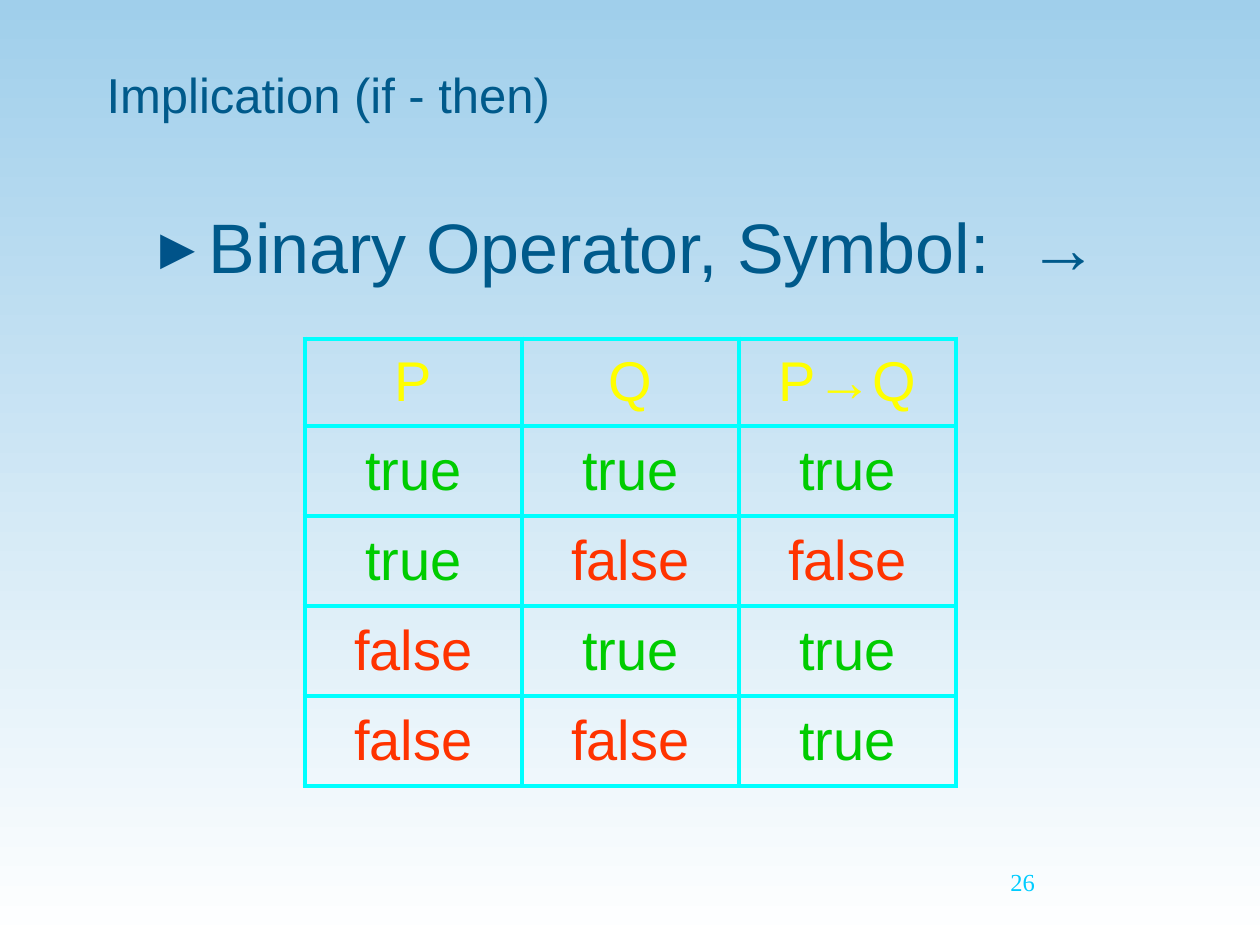
"""Builds a slide with the truth table of logical implication."""
from lxml.etree import SubElement
from pptx import Presentation
from pptx.dml.color import RGBColor
from pptx.enum.text import MSO_ANCHOR as Anchor, MSO_AUTO_SIZE as Fit, PP_ALIGN as Align
from pptx.oxml.ns import qn
from pptx.util import Emu, Pt

BLUE, CYAN = "005A8B", "00FFFF"
INKS = {"true": "00CC00", "false": "FF3300"}
ROWS = [
    ("P", "Q", "P→Q"),
    ("true", "true", "true"),
    ("true", "false", "false"),
    ("false", "true", "true"),
    ("false", "false", "true"),
]


def px(n):
    """Turn pixels into EMU."""
    return Emu(round(n * 914400 / 126))


def tint(color, code):
    """Set a colour from a hex string."""
    color.rgb = RGBColor.from_string(code)


def place(shape, x, y, w, h):
    """Move and size a shape."""
    shape.left, shape.top, shape.width, shape.height = map(px, (x, y, w, h))


def put(frame, text, size, ink, font="Arial", align=Align.LEFT, anchor=Anchor.TOP, inset=6):
    """Write one paragraph, with its arrows in bold."""
    frame.word_wrap = True
    frame.vertical_anchor = anchor
    frame.margin_top = px(inset)
    para = frame.paragraphs[0]
    para.alignment = align
    para.space_before = Pt(0)
    for part in filter(None, text.partition("→")):
        run = para.add_run()
        run.text = part
        run.font.name, run.font.size = font, Pt(size)
        run.font.bold = part == "→"
        tint(run.font.color, ink)
    return para


def bullet(para, mark, ink, indent):
    """Give a paragraph a coloured bullet and a hanging indent."""
    props = para._p.get_or_add_pPr()
    props.set("marL", str(px(indent)))
    props.set("indent", str(-px(indent)))
    SubElement(SubElement(props, qn("a:buClr")), qn("a:srgbClr"), val=ink)
    SubElement(props, qn("a:buFont"), typeface="Arial")
    SubElement(props, qn("a:buChar"), char=mark)


def edge(cell, ink, width):
    """Draw the four borders of a cell."""
    props = cell._tc.get_or_add_tcPr()
    for side in "LRTB":
        line = SubElement(props, qn(f"a:ln{side}"), w=str(Pt(width)))
        SubElement(SubElement(line, qn("a:solidFill")), qn("a:srgbClr"), val=ink)


def backdrop(slide, top, base):
    """Fill the background from top to base colour."""
    fill = slide.background.fill
    fill.gradient()
    fill.gradient_angle = 270
    for stop, pos, ink in zip(fill.gradient_stops, (0, 1), (top, base)):
        stop.position = pos
        tint(stop.color, ink)


def grid(slide, rows, x, y, w, head, step):
    """Add the truth table."""
    high = head + step * (len(rows) - 1)
    table = slide.shapes.add_table(len(rows), len(rows[0]), *map(px, (x, y, w, high))).table
    table.first_row = table.horz_banding = False
    for i, row in enumerate(rows):
        table.rows[i].height = px(step if i else head)
        for j, word in enumerate(row):
            cell = table.cell(i, j)
            edge(cell, CYAN, 3)
            cell.fill.background()
            cell.vertical_anchor = Anchor.MIDDLE
            put(cell.text_frame, word, 32, INKS.get(word, "FFFF00"), align=Align.CENTER)


def main():
    """Build and save the slide."""
    deck = Presentation()
    deck.slide_width, deck.slide_height = px(1260), px(945)
    slide = deck.slides.add_slide(deck.slide_layouts[1])
    backdrop(slide, "A0CFEB", "FFFFFF")

    title, body = slide.placeholders
    place(title, 94, 53, 1071, 94)
    put(title.text_frame, "Implication (if - then)", 28, BLUE, inset=11)
    place(body, 73, 189, 1113, 116)
    para = put(body.text_frame, "Binary Operator, Symbol:  →", 40, BLUE,
               align=Align.CENTER, inset=15)
    bullet(para, "▸", "005389", 48)
    for item in (title, body):
        item.text_frame.auto_size = Fit.NONE

    grid(slide, ROWS, 305, 339, 651, 87, 90)
    page = slide.shapes.add_textbox(*map(px, (998, 861, 262, 63)))
    put(page.text_frame, "26", 14, "00CCFF", font="Times New Roman")
    deck.save("out.pptx")


if __name__ == "__main__":
    main()
